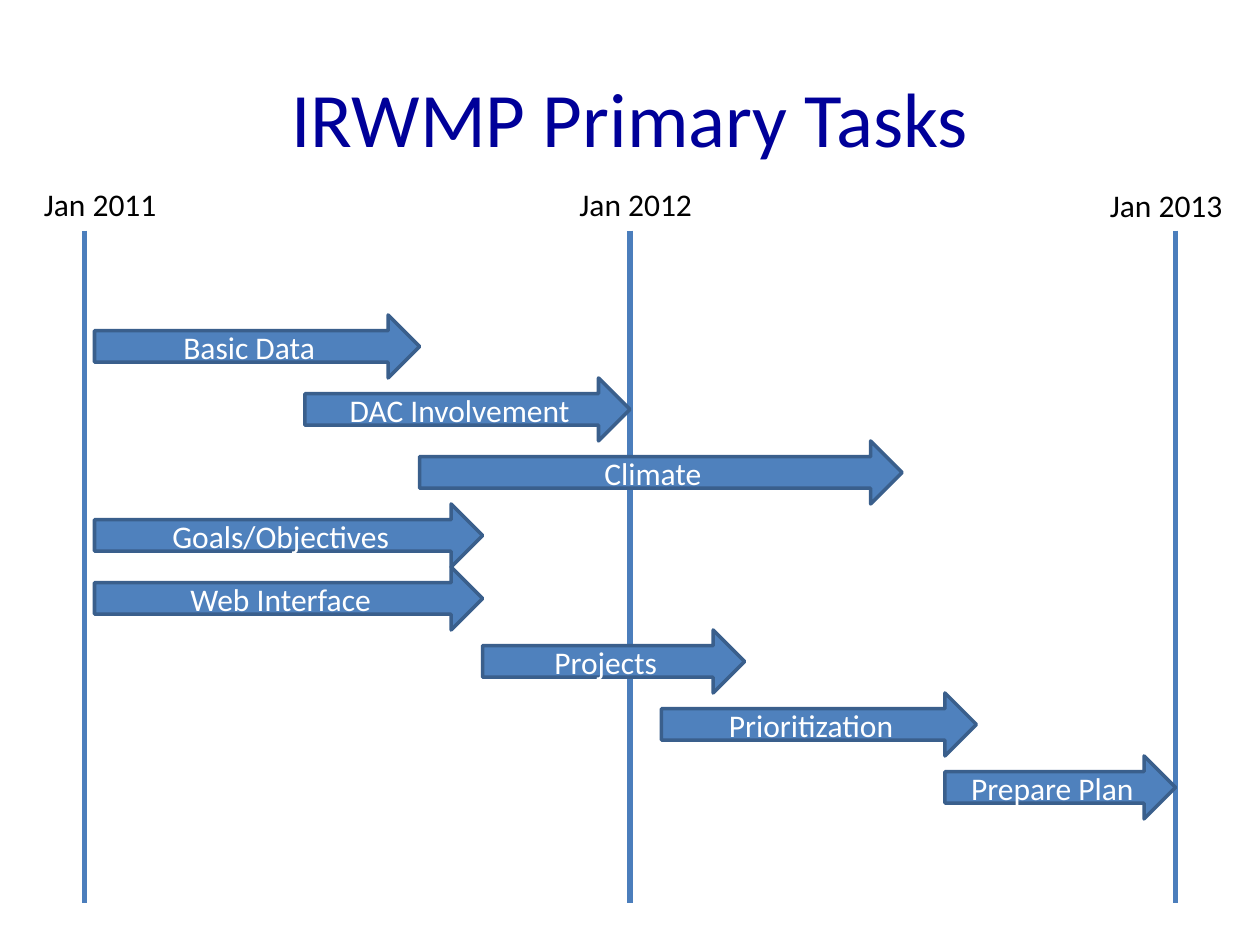
from dataclasses import dataclass

from lxml.etree import SubElement
from pptx import Presentation
from pptx.dml.color import RGBColor
from pptx.enum.shapes import MSO_CONNECTOR, MSO_SHAPE
from pptx.enum.text import MSO_ANCHOR, PP_ALIGN
from pptx.oxml.ns import qn
from pptx.util import Inches, Pt


@dataclass(frozen=True)
class Theme:
    font: str = "Calibri"
    title: RGBColor = RGBColor(0x00, 0x00, 0x99)
    label: RGBColor = RGBColor(0x00, 0x00, 0x00)
    year_line: RGBColor = RGBColor(0x4B, 0x7E, 0xBC)
    task_fill: RGBColor = RGBColor(0x4F, 0x81, 0xBD)
    task_line: RGBColor = RGBColor(0x3A, 0x5F, 0x8C)
    task_text: RGBColor = RGBColor(0xFF, 0xFF, 0xFF)
    title_size: Pt = Pt(44)
    body_size: Pt = Pt(18)
    year_width: Pt = Pt(3)
    task_width: Pt = Pt(2)


theme = Theme()

# label, line x, label left, label top, label width
YEARS = [
    ("Jan 2011", 0.67, 0.25, 1.42, 1.33),
    ("Jan 2012", 5, 4.5, 1.42, 1.25),
    ("Jan 2013", 9.33, 8.71, 1.43, 1.25),
]
# task, start x, length; one row each from top to bottom
TASKS = [
    ("Basic Data", 0.75, 2.58),
    ("DAC Involvement", 2.42, 2.58),
    ("Climate", 3.33, 3.83),
    ("Goals/Objectives", 0.75, 3.08),
    ("Web Interface", 0.75, 3.08),
    ("Projects", 3.83, 2.08),
    ("Prioritization", 5.25, 2.5),
    ("Prepare Plan", 7.5, 1.83),
]
LINE_TOP, LINE_BOTTOM = 1.83, 7.17
FIRST_ROW, ROW_HEIGHT = 2.5, 0.5


def write(tf, text, size, color, align, anchor):
    tf.word_wrap = True
    tf.vertical_anchor = anchor
    p = tf.paragraphs[0]
    p.alignment = align
    r = p.add_run()
    r.text = text
    r.font.name = theme.font
    r.font.size = size
    r.font.color.rgb = color


prs = Presentation()
prs.slide_width, prs.slide_height = Inches(10), Inches(7.5)
s = prs.slides.add_slide(prs.slide_layouts[5])

title = s.shapes.title
title.left, title.top = Inches(0.5), Inches(0.3)
title.width, title.height = Inches(9), Inches(1.25)
write(title.text_frame, "IRWMP Primary Tasks", theme.title_size, theme.title,
      PP_ALIGN.CENTER, MSO_ANCHOR.MIDDLE)

for label, x, left, top, width in YEARS:
    line = s.shapes.add_connector(MSO_CONNECTOR.STRAIGHT, Inches(x), Inches(LINE_TOP),
                                  Inches(x), Inches(LINE_BOTTOM))
    line.line.color.rgb = theme.year_line
    line.line.width = theme.year_width
    SubElement(line._element.spPr, qn("a:effectLst"))

    sp = s.shapes.add_textbox(Inches(left), Inches(top), Inches(width), Inches(0.4))
    write(sp.text_frame, label, theme.body_size, theme.label,
          PP_ALIGN.LEFT, MSO_ANCHOR.TOP)

for row, (task, start, length) in enumerate(TASKS):
    sp = s.shapes.add_shape(MSO_SHAPE.RIGHT_ARROW, Inches(start),
                            Inches(FIRST_ROW + row * ROW_HEIGHT),
                            Inches(length), Inches(ROW_HEIGHT))
    sp.shadow.inherit = False
    sp.fill.solid()
    sp.fill.fore_color.rgb = theme.task_fill
    sp.line.color.rgb = theme.task_line
    sp.line.width = theme.task_width
    write(sp.text_frame, task, theme.body_size, theme.task_text,
          PP_ALIGN.CENTER, MSO_ANCHOR.MIDDLE)

prs.save("out.pptx")
